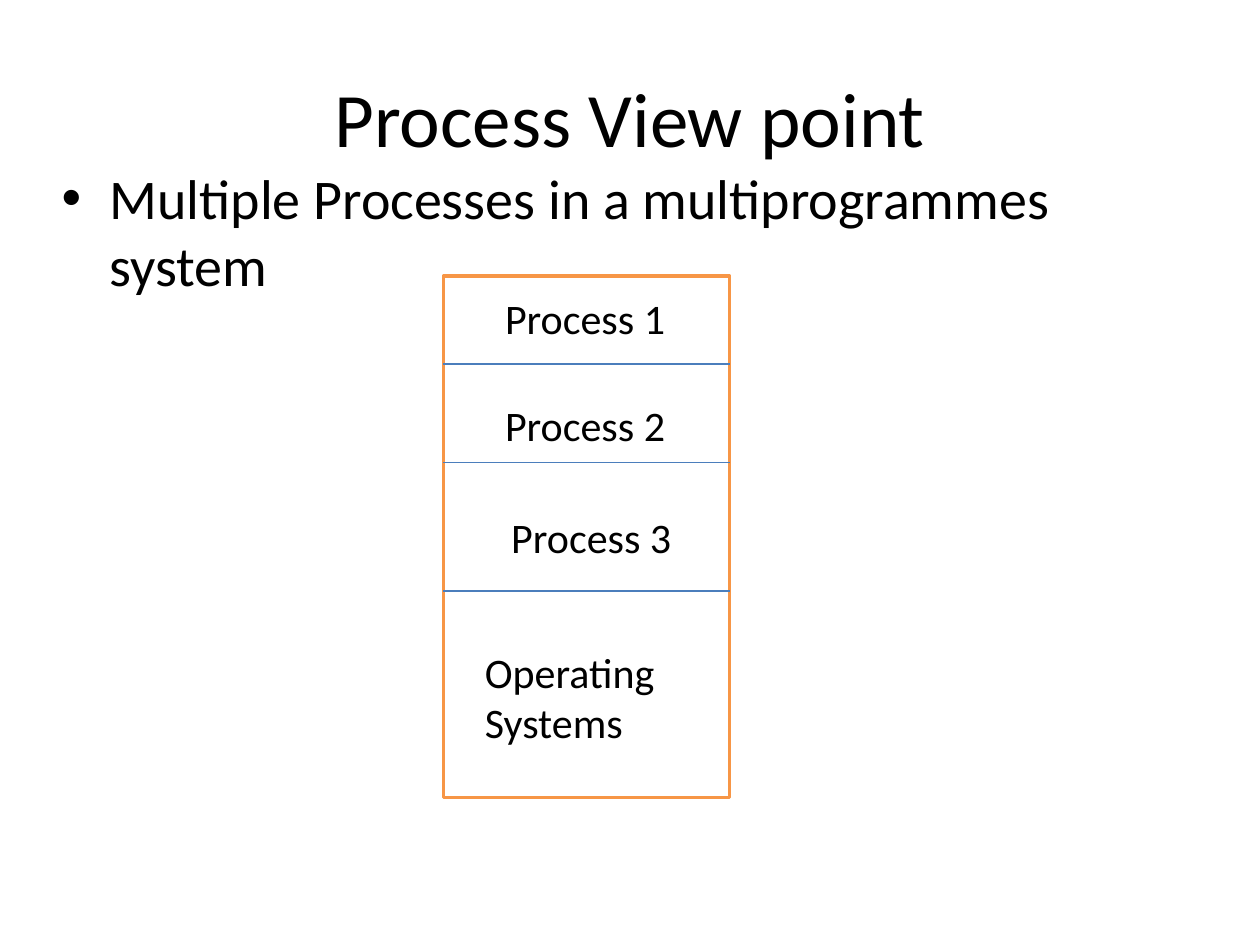
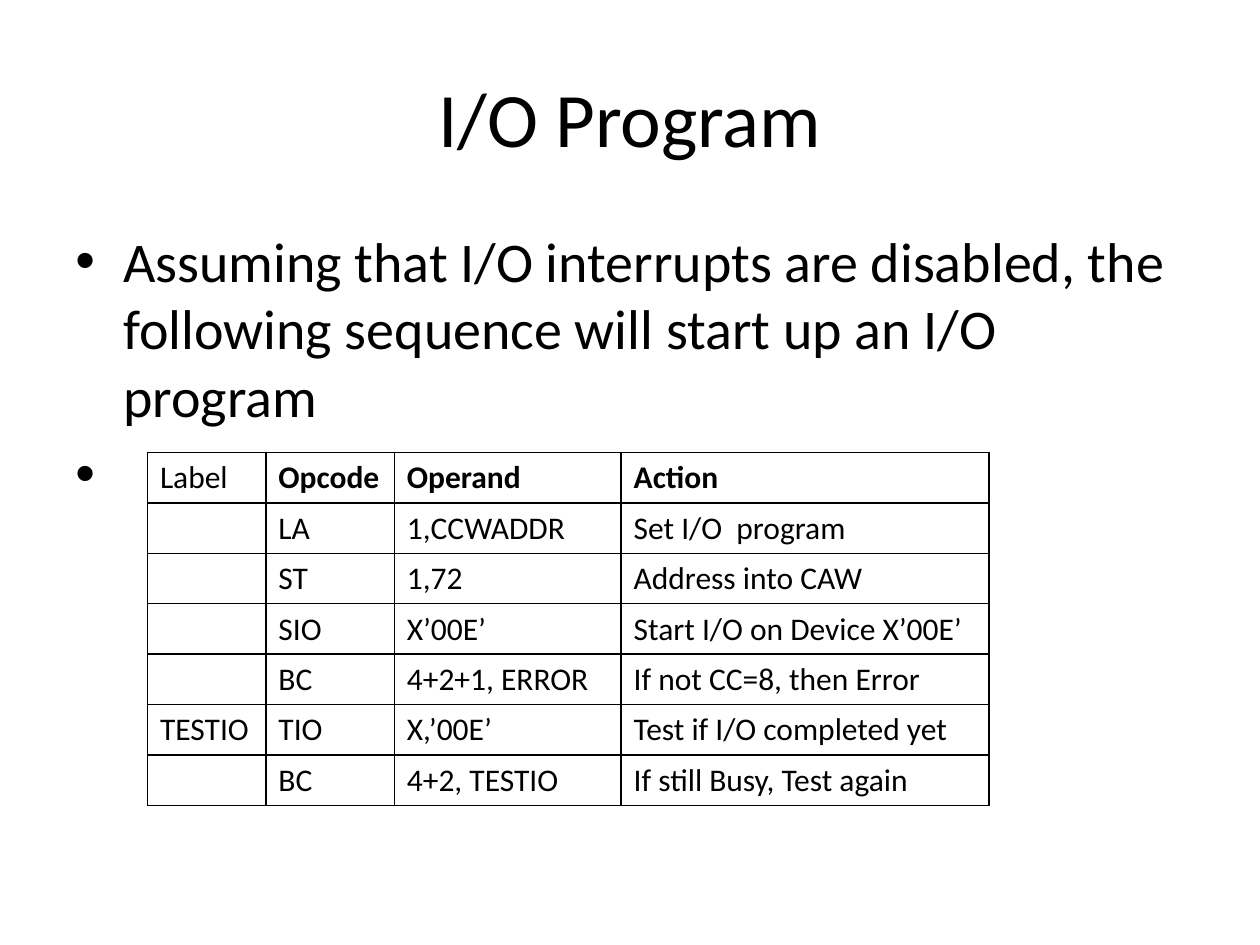
from lxml import etree
from pptx import Presentation
from pptx.dml.color import RGBColor
from pptx.enum import shapes, text
from pptx.oxml import ns
from pptx.util import Emu, Pt

PX = 9144
FONT = "Calibri"
BLACK = RGBColor(0x00, 0x00, 0x00)
WHITE = RGBColor(0xFF, 0xFF, 0xFF)
ORANGE = RGBColor(0xF7, 0x96, 0x46)
BLUE = RGBColor(0x4B, 0x7E, 0xBC)

MEMORY_LEFT, MEMORY_TOP, MEMORY_WIDTH, MEMORY_HEIGHT = 352, 219, 227, 414
DIVIDERS = (289, 367, 469)
COLUMN_WIDTHS = (94, 102, 180, 292)
ROW_HEIGHT = 40
PROGRAM = (
    ("Label", "Opcode", "Operand", "Action"),
    ("", "LA", "1,CCWADDR", "Set I/O  program"),
    ("", "ST", "1,72", "Address into CAW"),
    ("", "SIO", "X’00E’", "Start I/O on Device X’00E’"),
    ("", "BC", "4+2+1, ERROR", "If not CC=8, then Error"),
    ("TESTIO", "TIO", "X,’00E’", "Test if I/O completed yet"),
    ("", "BC", "4+2, TESTIO", "If still Busy, Test again"),
)


def px(*lengths):
    return [Emu(length * PX) for length in lengths]


def style_text(frame, size, align=text.PP_ALIGN.LEFT, bold=False):
    for para in frame.paragraphs:
        para.alignment = align
        for span in para.runs:
            span.font.name = FONT
            span.font.size = Pt(size)
            span.font.bold = bold
            span.font.color.rgb = BLACK


def add_page(deck, title):
    page = deck.slides.add_slide(deck.slide_layouts[5])
    heading = page.shapes.title
    heading.left, heading.top, heading.width, heading.height = px(50, 30, 900, 125)
    heading.text_frame.text = title
    heading.text_frame.vertical_anchor = text.MSO_ANCHOR.MIDDLE
    style_text(heading.text_frame, 44, text.PP_ALIGN.CENTER)
    return page


def add_text(page, content, place, size, wrap=True):
    box = page.shapes.add_textbox(*px(*place))
    box.text_frame.word_wrap = wrap
    box.text_frame.text = content
    style_text(box.text_frame, size)
    return box


def add_bullets(page, items, place):
    box = add_text(page, "\n".join(items), place, 32)
    indent = 38 * PX
    for para in box.text_frame.paragraphs:
        para.space_before = Pt(6.4)
        properties = para._p.get_or_add_pPr()
        properties.set("marL", str(indent))
        properties.set("indent", str(-indent))
        etree.SubElement(properties, ns.qn("a:buFont"), typeface="Arial")
        etree.SubElement(properties, ns.qn("a:buChar"), char="•")


def add_memory(page, content):
    place = px(MEMORY_LEFT, MEMORY_TOP, MEMORY_WIDTH, MEMORY_HEIGHT)
    memory = page.shapes.add_shape(shapes.MSO_SHAPE.RECTANGLE, *place)
    memory.shadow.inherit = False
    memory.fill.solid()
    memory.fill.fore_color.rgb = WHITE
    memory.line.color.rgb = ORANGE
    memory.line.width = Pt(2)
    memory.text_frame.text = content
    memory.text_frame.vertical_anchor = text.MSO_ANCHOR.MIDDLE
    style_text(memory.text_frame, 24, text.PP_ALIGN.CENTER)


def add_divider(page, y):
    ends = px(MEMORY_LEFT, y, MEMORY_LEFT + MEMORY_WIDTH, y)
    divider = page.shapes.add_connector(shapes.MSO_CONNECTOR.STRAIGHT, *ends)
    divider.line.color.rgb = BLUE
    divider.line.width = Pt(0.75)
    etree.SubElement(divider._element.spPr, ns.qn("a:effectLst"))


def add_borders(cell):
    properties = cell._tc.get_or_add_tcPr()
    for side in ("L", "R", "T", "B"):
        border = etree.SubElement(properties, ns.qn(f"a:ln{side}"), w=str(Pt(1)))
        fill = etree.SubElement(border, ns.qn("a:solidFill"))
        etree.SubElement(fill, ns.qn("a:srgbClr"), val=str(BLACK))


def add_program_table(page, left, top):
    place = px(left, top, sum(COLUMN_WIDTHS), ROW_HEIGHT * len(PROGRAM))
    table = page.shapes.add_table(len(PROGRAM), len(COLUMN_WIDTHS), *place).table
    for column, width in zip(table.columns, px(*COLUMN_WIDTHS)):
        column.width = width
    for row_number, values in enumerate(PROGRAM):
        for column_number, value in enumerate(values):
            cell = table.cell(row_number, column_number)
            cell.text_frame.text = value
            style_text(cell.text_frame, 18, bold=row_number == 0 and column_number > 0)
            add_borders(cell)
            cell.fill.solid()
            cell.fill.fore_color.rgb = WHITE


def build_process_page(deck):
    page = add_page(deck, "Process View point")
    add_bullets(page, ["Multiple Processes in a multiprogrammes system"], (39, 125, 911, 545))
    add_memory(page, " Process 3")
    for y in DIVIDERS:
        add_divider(page, y)
    for label, top in (("Process 1", 227), ("Process 2", 312)):
        add_text(page, label, (391, top, 148, 50), 24, wrap=False)
    add_text(page, "Operating Systems", (375, 508, 172, 91), 24)


def build_program_page(deck):
    page = add_page(deck, "I/O Program")
    assumption = (
        "Assuming that I/O interrupts are disabled, "
        "the following sequence will start up an I/O program"
    )
    add_bullets(page, [assumption, " "], (50, 175, 900, 495))
    add_program_table(page, 117, 359)


def main():
    deck = Presentation()
    deck.slide_width, deck.slide_height = px(1000, 750)
    build_process_page(deck)
    build_program_page(deck)
    deck.save("out.pptx")


if __name__ == "__main__":
    main()
